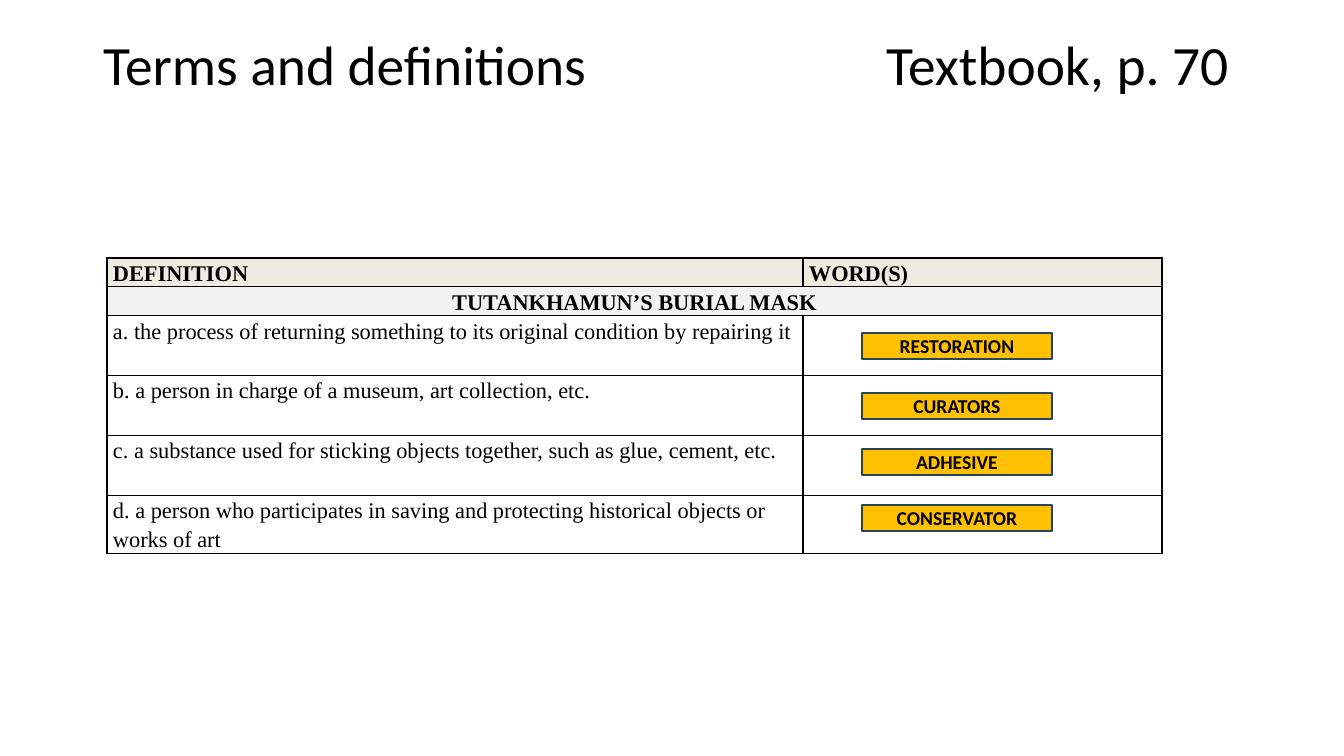
import pptx
import pptx.dml.color
import pptx.enum.shapes
import pptx.enum.text
import pptx.oxml
import pptx.oxml.ns
import pptx.util
from lxml import etree

PX = 914400 / 100.8
ALIGN = pptx.enum.text.PP_ALIGN
MIDDLE = pptx.enum.text.MSO_ANCHOR.MIDDLE
SERIF = "Times New Roman"
SANS = "Calibri"

DEFINITIONS = [
    ("a. the process of returning something to its original condition by repairing it", ALIGN.JUSTIFY),
    ("b. a person in charge of a museum, art collection, etc.", ALIGN.JUSTIFY),
    ("c. a substance used for sticking objects together, such as glue, cement, etc.", ALIGN.LEFT),
    ("d. a person who participates in saving and protecting historical objects or works of art", ALIGN.LEFT),
]
ANSWERS = [("RESTORATION", 333), ("CURATORS", 393), ("ADHESIVE", 449), ("CONSERVATOR", 505)]
COLUMN_WIDTHS = [696, 359]
ROW_HEIGHTS = [28, 28, 60, 60, 60, 58]


def px(n):
    return pptx.util.Emu(round(n * PX))


def rgb(color):
    return pptx.dml.color.RGBColor.from_string(color)


def write(tf, text, font, size, bold=False, align=ALIGN.LEFT, spacing=1.0):
    p = tf.paragraphs[0]
    p.text = text
    p.alignment = align
    p.line_spacing = spacing
    for r in p.runs:
        r.font.name = font
        r.font.size = pptx.util.Pt(size)
        r.font.bold = bold
        r.font.color.rgb = rgb("000000")
    return p


def add_title(s, text, tab):
    sp = s.shapes.title
    sp.left, sp.top, sp.width, sp.height = px(93), px(40), px(1159), px(55)
    tf = sp.text_frame
    tf.word_wrap = True
    tf.auto_size = pptx.enum.text.MSO_AUTO_SIZE.NONE
    tf.vertical_anchor = MIDDLE
    p = write(tf, text, SANS, 39.6, spacing=0.9)
    qn = pptx.oxml.ns.qn
    tabs = etree.SubElement(p._p.get_or_add_pPr(), qn("a:tabLst"))
    etree.SubElement(tabs, qn("a:tab"), pos=str(px(tab)), algn="l")


def format_cell(cell, fill=None):
    cell.margin_left = cell.margin_right = px(6)
    cell.margin_top = cell.margin_bottom = 0
    tc_pr = cell._tc.get_or_add_tcPr()
    for side in ("lnL", "lnR", "lnT", "lnB"):
        tc_pr.append(pptx.oxml.parse_xml(
            f'<a:{side} {pptx.oxml.ns.nsdecls("a")} w="12700"><a:solidFill>'
            f'<a:srgbClr val="000000"/></a:solidFill></a:{side}>'))
    if fill:
        cell.fill.solid()
        cell.fill.fore_color.rgb = rgb(fill)
    else:
        cell.fill.background()


def add_definition_table(s):
    frame = s.shapes.add_table(len(ROW_HEIGHTS), len(COLUMN_WIDTHS), px(107), px(258),
                               px(sum(COLUMN_WIDTHS)), px(sum(ROW_HEIGHTS)))
    table = frame.table
    table.first_row = table.horz_banding = False
    for column, width in zip(table.columns, COLUMN_WIDTHS):
        column.width = px(width)
    row_fills = ["EEECE1", "F2F2F2"] + [None] * len(DEFINITIONS)
    for row, height, fill in zip(table.rows, ROW_HEIGHTS, row_fills):
        row.height = px(height)
        for cell in row.cells:
            format_cell(cell, fill)
    table.cell(1, 0).merge(table.cell(1, 1))

    def fill_in(row, col, text, align, bold=False):
        write(table.cell(row, col).text_frame, text, SERIF, 16, bold, align, 1.15)

    fill_in(0, 0, "DEFINITION", ALIGN.JUSTIFY, True)
    fill_in(0, 1, "WORD(S)", ALIGN.JUSTIFY, True)
    fill_in(1, 0, "TUTANKHAMUN’S BURIAL MASK", ALIGN.CENTER, True)
    for row, (text, align) in enumerate(DEFINITIONS, start=2):
        fill_in(row, 0, text, align)


def add_answer(s, text, top):
    sp = s.shapes.add_shape(pptx.enum.shapes.MSO_SHAPE.RECTANGLE,
                            px(862), px(top), px(190), px(26))
    sp.shadow.inherit = False
    sp.fill.solid()
    sp.fill.fore_color.rgb = rgb("FFC000")
    sp.line.color.rgb = rgb("28445D")
    sp.line.width = pptx.util.Pt(1)
    tf = sp.text_frame
    tf.word_wrap = True
    tf.vertical_anchor = MIDDLE
    write(tf, text, SANS, 14, True, ALIGN.CENTER)


def main():
    prs = pptx.Presentation()
    prs.slide_width, prs.slide_height = px(1344), px(756)
    s = prs.slides.add_slide(prs.slide_layouts[5])
    add_title(s, "Terms and definitions\tTextbook, p. 70", 783)
    add_definition_table(s)
    for text, top in ANSWERS:
        add_answer(s, text, top)
    prs.save("out.pptx")


if __name__ == "__main__":
    main()
